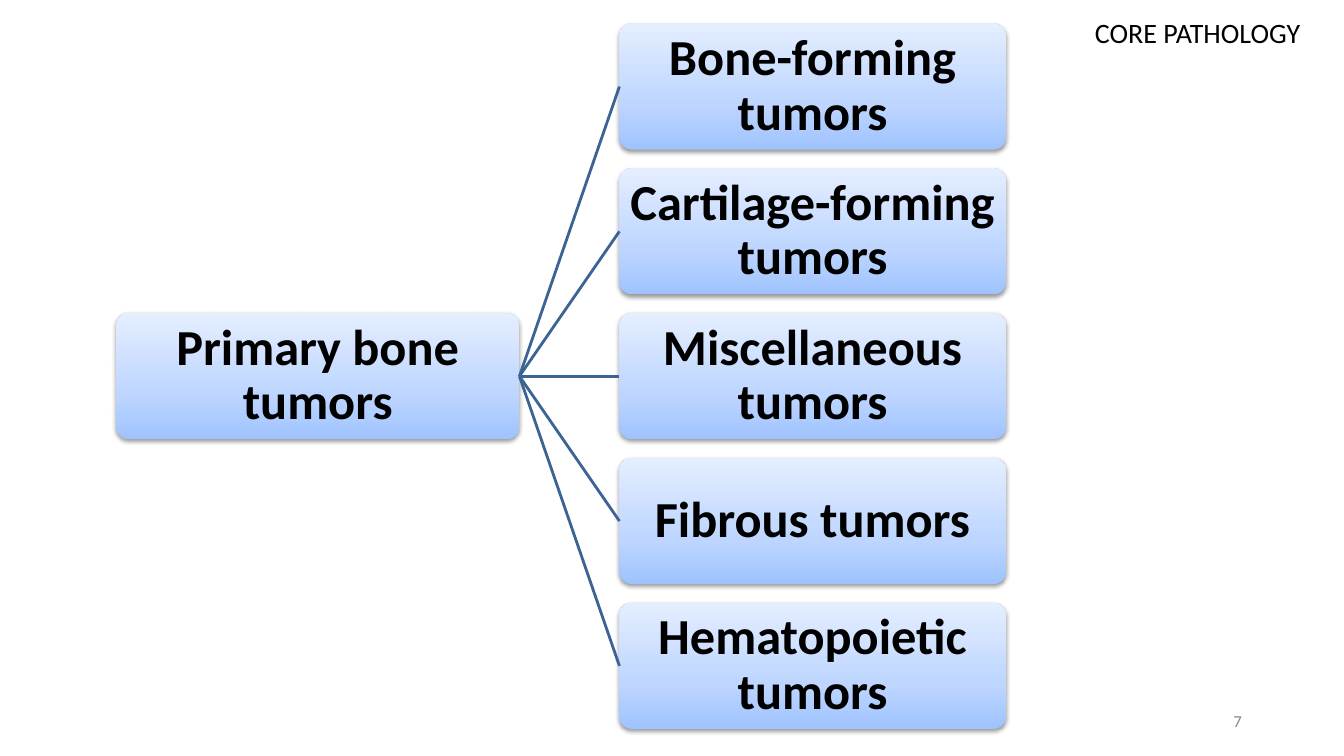
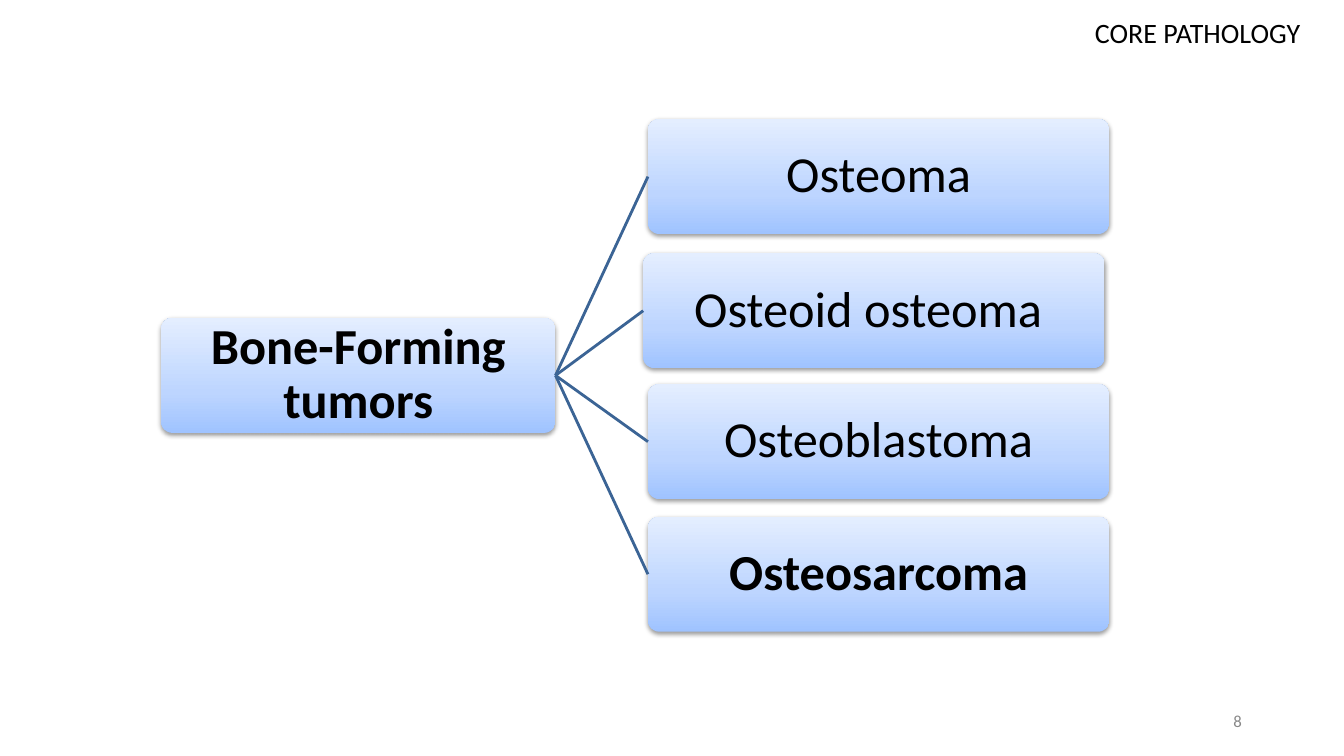
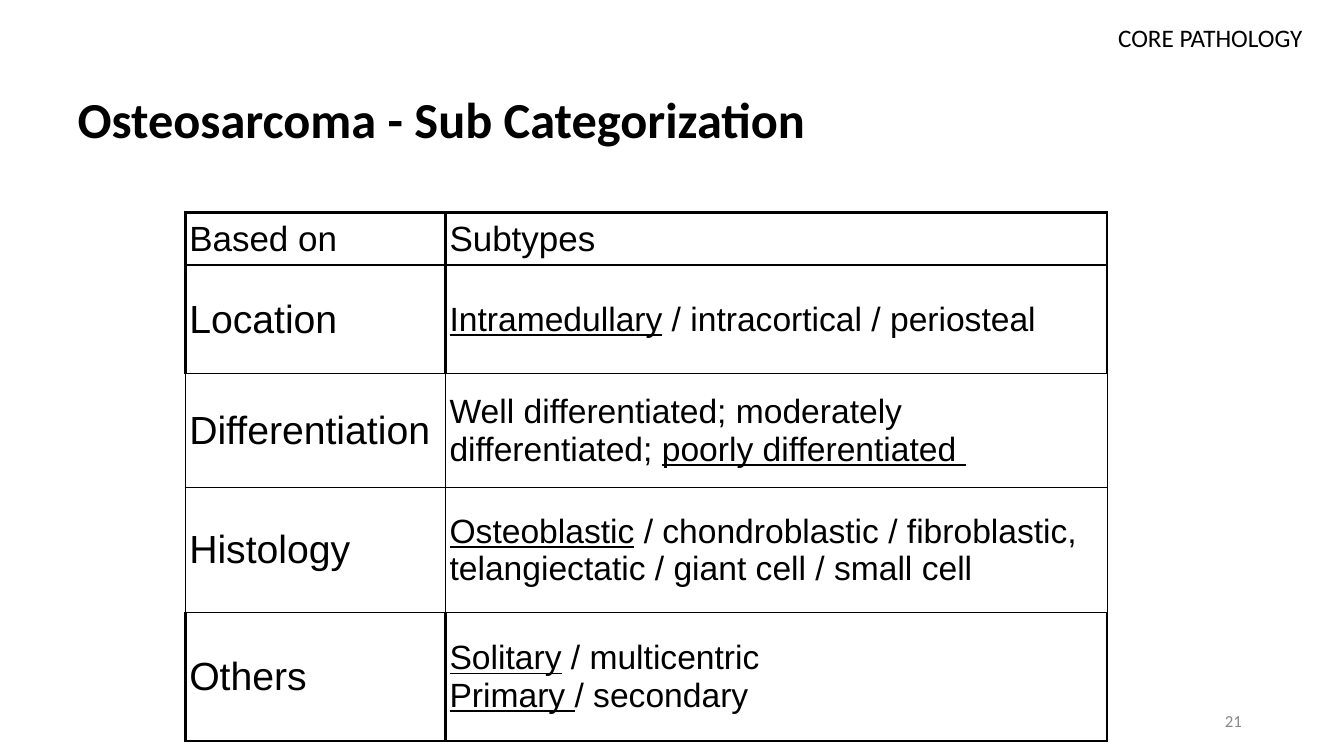
from pptx import Presentation
from pptx.dml.color import RGBColor
from pptx.enum.shapes import MSO_CONNECTOR, MSO_SHAPE
from pptx.enum.text import MSO_ANCHOR, PP_ALIGN
from pptx.oxml import parse_xml
from pptx.oxml.ns import nsdecls
from pptx.util import Cm, Pt

FONT = "Calibri"
TABLE_FONT = "Arial"
BLACK = "000000"
GREY = "888888"
LINE_BLUE = "3B6495"
HEADER = "CORE PATHOLOGY"
NODE_GRADIENT = (
    f'<a:gradFill {nsdecls("a")} rotWithShape="1"><a:gsLst>'
    + "".join(f'<a:gs pos="{position}"><a:srgbClr val="{colour}"/></a:gs>'
              for position, colour in ((0, "9FC3FF"), (35000, "BDD5FF"), (100000, "E4EEFF")))
    + '</a:gsLst><a:lin ang="16200000" scaled="0"/></a:gradFill>'
)
NODE_SHADOW = (
    f'<a:effectLst {nsdecls("a")}><a:outerShdw blurRad="40000" dist="20000" dir="5400000" '
    f'rotWithShape="0"><a:srgbClr val="{BLACK}"><a:alpha val="38000"/></a:srgbClr>'
    '</a:outerShdw></a:effectLst>'
)


def style_font(font, name, size, colour=BLACK, bold=False):
    font.name = name
    font.size = Pt(size)
    font.bold = bold
    font.color.rgb = RGBColor.from_string(colour)


def add_label(slide, text, box, size, colour=BLACK, inset=0.13, anchor=MSO_ANCHOR.TOP):
    """Add a right-aligned text box; box is left, top, width, height in cm."""
    frame = slide.shapes.add_textbox(*map(Cm, box)).text_frame
    frame.word_wrap = True
    frame.vertical_anchor = anchor
    frame.margin_top = frame.margin_bottom = Cm(inset)
    paragraph = frame.paragraphs[0]
    paragraph.text = text
    paragraph.alignment = PP_ALIGN.RIGHT
    style_font(paragraph.font, FONT, size, colour)


presentation = Presentation()
presentation.slide_width = Cm(33.87)
presentation.slide_height = Cm(19.05)
title_only, blank = presentation.slide_layouts[5], presentation.slide_layouts[6]

# Slides with a root box that branches into a column of boxes
# Each branch: text, bold, shift right, shift down
trees = [
    {
        "number": "7", "root": "Primary bone tumors", "height": 3.18,
        "root_left": 2.93, "root_width": 10.16,
        "left": 15.61, "width": 9.74, "top": 0.59, "pitch": 3.65,
        "branches": [
            ("Bone-forming tumors", True, 0, 0),
            ("Cartilage-forming tumors", True, 0, 0),
            ("Miscellaneous tumors", True, 0, 0),
            ("Fibrous tumors", True, 0, 0),
            ("Hematopoietic tumors", True, 0, 0),
        ],
    },
    {
        "number": "8", "root": "Bone-Forming tumors", "height": 2.9,
        "root_left": 4.06, "root_width": 9.94,
        "left": 16.33, "width": 11.63, "top": 3, "pitch": 3.34,
        "branches": [
            ("Osteoma", False, 0, 0),
            ("Osteoid osteoma ", False, -0.12, 0.04),
            ("Osteoblastoma", False, 0, 0),
            ("Osteosarcoma", True, 0, 0),
        ],
    },
]

for tree in trees:
    slide = presentation.slides.add_slide(blank)
    add_label(slide, HEADER, (24.2, 0.15, 8.82, 1.14), 20, inset=0.25)

    root_top = tree["top"] + (len(tree["branches"]) - 1) * tree["pitch"] / 2
    nodes = [(tree["root"], True, tree["root_left"], root_top, tree["root_width"])]
    for index, (text, bold, shift_right, shift_down) in enumerate(tree["branches"]):
        top = tree["top"] + index * tree["pitch"] + shift_down
        nodes.append((text, bold, tree["left"] + shift_right, top, tree["width"]))

    root = None
    for text, bold, left, top, width in nodes:
        node = slide.shapes.add_shape(MSO_SHAPE.ROUNDED_RECTANGLE, Cm(left), Cm(top),
                                      Cm(width), Cm(tree["height"]))
        node.adjustments[0] = 0.1
        properties = node._element.spPr
        properties.append(parse_xml(NODE_GRADIENT))
        node.line.fill.background()
        properties.append(parse_xml(NODE_SHADOW))

        frame = node.text_frame
        frame.word_wrap = True
        frame.vertical_anchor = MSO_ANCHOR.MIDDLE
        frame.margin_left = frame.margin_right = Cm(0.06)
        frame.margin_top = frame.margin_bottom = Cm(0.06)
        paragraph = frame.paragraphs[0]
        paragraph.text = text
        paragraph.alignment = PP_ALIGN.CENTER
        paragraph.line_spacing = 0.9
        style_font(paragraph.font, FONT, 36, bold=bold)

        if root is None:
            root = node
            continue
        connector = slide.shapes.add_connector(MSO_CONNECTOR.STRAIGHT, 0, 0, 0, 0)
        connector.begin_connect(root, 3)
        connector.end_connect(node, 1)
        connector.line.color.rgb = RGBColor.from_string(LINE_BLUE)
        connector.line.width = Pt(2)
        connector._element.spPr.append(parse_xml(f'<a:effectLst {nsdecls("a")}/>'))

# Table of subtypes
slide = presentation.slides.add_slide(title_only)
title = slide.shapes.title
title.left, title.top, title.width, title.height = Cm(1.7), Cm(1.02), Cm(29.21), Cm(3.68)
title.text_frame.vertical_anchor = MSO_ANCHOR.MIDDLE
paragraph = title.text_frame.paragraphs[0]
paragraph.text = "Osteosarcoma - Sub Categorization"
paragraph.alignment = PP_ALIGN.LEFT
paragraph.line_spacing = 1.15
paragraph.space_after = Pt(4)
style_font(paragraph.font, FONT, 36, bold=True)
add_label(slide, HEADER + " ", (25.78, 0.43, 7.44, 1.02), 18)

# Each row: height, border widths (left, right, top, bottom), font sizes, basis,
# then paragraphs of (text, underlined) runs
rows = [
    (1.32, (2, 2, 2, 2), (25, 25), "Based on", [[("Subtypes", False)]]),
    (2.74, (2, 2, 2, 1), (28, 24), "Location",
     [[("Intramedullary", True), (" / intracortical / periosteal", False)]]),
    (2.87, (1, 1, 1, 1), (28, 24), "Differentiation",
     [[("Well differentiated; moderately differentiated; ", False),
       ("poorly differentiated ", True)]]),
    (3.15, (1, 1, 1, 1), (28, 24), "Histology",
     [[("Osteoblastic", True),
       (" / chondroblastic / fibroblastic, telangiectatic / giant cell / small cell", False)]]),
    (3.23, (2, 2, 1, 2), (28, 24), "Others",
     [[("Solitary", True), (" / multicentric", False)],
      [("Primary ", True), ("/ secondary", False)]]),
]
column_widths = (6.56, 16.67)
table = slide.shapes.add_table(len(rows), len(column_widths), Cm(4.67), Cm(5.36),
                               Cm(sum(column_widths)), Cm(sum(row[0] for row in rows))).table
table.first_row = False
table.horz_banding = False
for column, width in zip(table.columns, column_widths):
    column.width = Cm(width)

for row, (height, borders, sizes, basis, subtypes) in zip(table.rows, rows):
    row.height = Cm(height)
    contents = ([[(basis, False)]], subtypes)
    for cell, size, paragraphs in zip(row.cells, sizes, contents):
        cell.vertical_anchor = MSO_ANCHOR.MIDDLE
        cell.margin_left = cell.margin_right = Cm(0.1)
        cell.margin_top = cell.margin_bottom = Cm(0.1)
        cell_properties = cell._tc.get_or_add_tcPr()
        for side, weight in zip("LRTB", borders):
            cell_properties.append(parse_xml(
                f'<a:ln{side} {nsdecls("a")} w="{Pt(weight)}"><a:solidFill>'
                f'<a:srgbClr val="{BLACK}"/></a:solidFill></a:ln{side}>'))
        cell.fill.background()

        frame = cell.text_frame
        for index, runs in enumerate(paragraphs):
            paragraph = frame.add_paragraph() if index else frame.paragraphs[0]
            style_font(paragraph.font, TABLE_FONT, size)
            for text, underlined in runs:
                run = paragraph.add_run()
                run.text = text
                if underlined:
                    run.font.underline = True

# Slide numbers
numbers = [tree["number"] for tree in trees] + ["21"]
for slide, number in zip(presentation.slides, numbers):
    add_label(slide, number, (23.93, 17.66, 7.62, 1.01), 12, GREY, anchor=MSO_ANCHOR.MIDDLE)

presentation.save("out.pptx")
